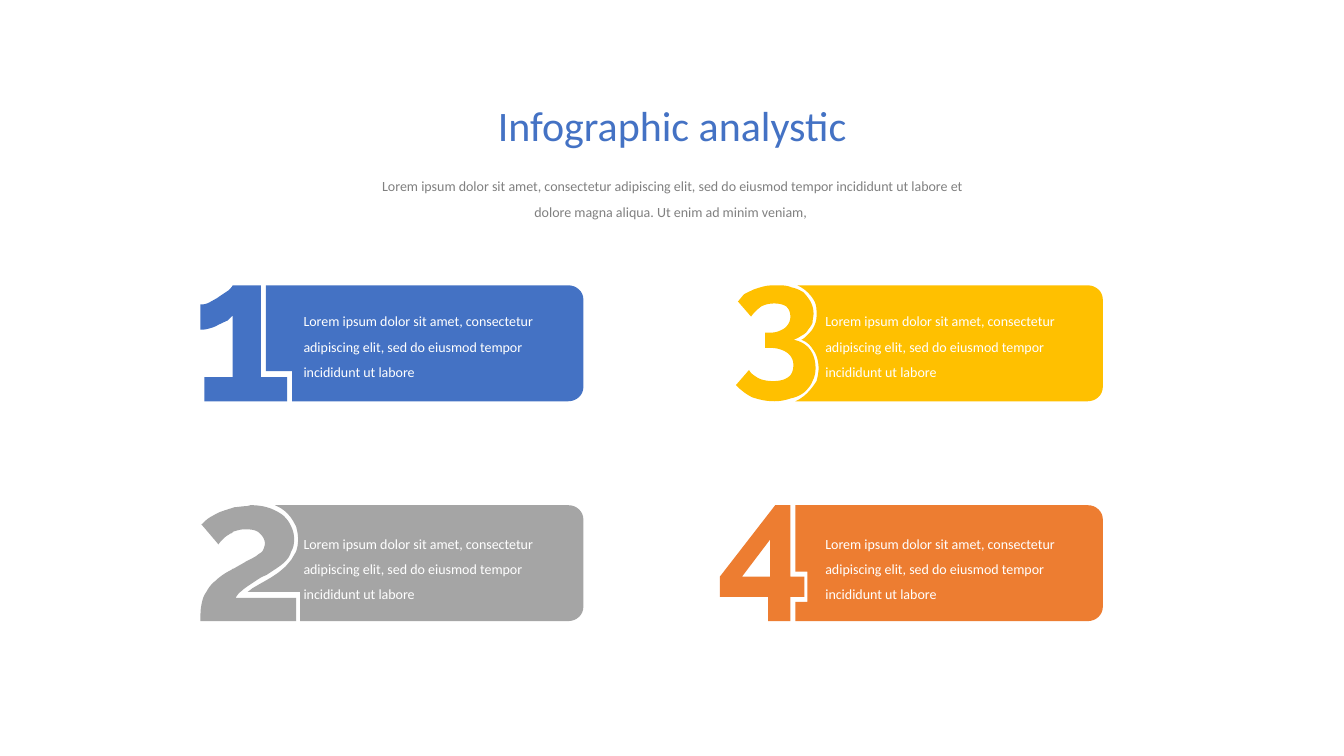
from dataclasses import dataclass

from pptx import Presentation
from pptx.dml.color import RGBColor
from pptx.enum.text import MSO_ANCHOR as Anchor, MSO_AUTO_SIZE as AutoSize, PP_ALIGN as Align
from pptx.util import Cm, Pt


@dataclass(frozen=True)
class Theme:
    font: str = "Calibri"
    blue: str = "4472C4"
    gray: str = "A5A5A5"
    gold: str = "FFC000"
    orange: str = "ED7D31"
    subtitle: str = "808080"
    white: str = "FFFFFF"
    title_size: int = 30
    body_size: int = 10


@dataclass(frozen=True)
class Card:
    column: int
    row: int
    color: str
    digit: list
    notch: list


THEME = Theme()
TITLE = "Infographic analystic"
BODY = ("Lorem ipsum dolor sit amet, consectetur adipiscing elit, "
        "sed do eiusmod tempor incididunt ut labore")
SUBTITLE = f"{BODY} et dolore magna aliqua. Ut enim ad minim veniam, "

CARD_LEFTS = (5.05, 18.14)
CARD_TOPS = (7.19, 12.73)
TEXT_LEFTS = (7.65, 20.8)
TEXT_TOPS = (7.67, 13.28)
CURVE_STEPS = 8

PANEL_END = [
    (365, 0), (373, 0, 380, 6, 380, 14),
    (380, 101), (380, 109, 373, 115, 365, 115),
]

DIGIT_ONE = [[
    (86, 91), (86, 115), (4, 115), (4, 91), (32, 91), (32, 30),
    (31, 31, 29, 33, 27, 35), (24, 36, 21, 38, 18, 39),
    (15, 41, 12, 42, 8, 43), (5, 44, 2, 44, 0, 44), (0, 19),
    (2, 19, 5, 19, 9, 17), (12, 15, 15, 14, 19, 11),
    (22, 9, 25, 7, 28, 5), (30, 3, 32, 1, 32, 0), (60, 0), (60, 91),
]]
NOTCH_ONE = [(91, 115), (91, 85), (65, 85), (65, 0)]

DIGIT_TWO = [[
    (35, 92), (36, 90, 38, 87, 41, 85), (43, 83, 46, 81, 49, 79),
    (52, 77, 55, 75, 58, 73), (61, 71, 64, 70, 66, 69),
    (69, 67, 72, 65, 75, 63), (78, 61, 81, 59, 84, 56),
    (87, 53, 89, 50, 90, 46), (92, 43, 93, 39, 93, 34),
    (93, 29, 92, 25, 90, 21), (88, 16, 85, 13, 82, 10),
    (78, 7, 74, 5, 69, 3), (63, 1, 57, 0, 50, 0),
    (49, 0, 47, 1, 45, 1), (41, 1, 37, 2, 34, 2),
    (28, 4, 24, 5, 19, 7), (15, 9, 11, 11, 8, 13),
    (5, 15, 3, 18, 1, 19), (18, 39), (19, 37, 21, 35, 23, 33),
    (25, 31, 27, 30, 30, 28), (31, 28, 32, 27, 33, 26),
    (34, 26, 36, 25, 37, 25), (40, 24, 42, 24, 46, 24),
    (52, 24, 56, 25, 59, 28), (62, 31, 64, 34, 64, 38),
    (64, 40, 63, 43, 62, 45), (61, 47, 58, 48, 56, 50),
    (53, 52, 49, 54, 45, 56), (42, 58, 38, 60, 33, 63),
    (32, 63, 32, 63, 31, 64), (25, 67, 19, 71, 15, 75),
    (11, 78, 8, 82, 6, 86), (3, 90, 2, 94, 1, 99),
    (0, 104, 0, 110, 0, 115), (95, 115), (95, 92),
]]
NOTCH_TWO = [
    (99, 115), (99, 86), (47, 86), (58, 76, 84, 70, 95, 46),
    (96, 43, 97, 39, 97, 34), (97, 29, 96, 25, 95, 21),
    (93, 18, 89, 6, 74, 0),
]

DIGIT_THREE = [[
    (73, 54), (79, 55, 85, 58, 89, 63), (93, 68, 95, 75, 95, 82),
    (95, 87, 94, 91, 92, 95), (90, 100, 87, 103, 84, 106),
    (80, 109, 76, 111, 71, 112), (65, 114, 60, 115, 54, 115),
    (45, 115, 38, 113, 32, 111), (26, 108, 21, 104, 16, 99), (29, 84),
    (31, 88, 35, 90, 38, 92), (42, 94, 47, 95, 53, 95),
    (59, 95, 64, 94, 68, 91), (71, 89, 73, 85, 73, 79),
    (73, 74, 71, 70, 67, 67), (63, 64, 57, 62, 49, 62),
    (45, 62), (45, 47), (50, 47), (56, 47, 61, 45, 65, 42),
    (68, 39, 70, 36, 70, 31), (70, 27, 69, 24, 66, 21),
    (63, 19, 59, 18, 54, 18), (49, 18, 45, 19, 41, 21),
    (37, 24, 34, 27, 31, 31), (18, 16), (20, 14, 22, 11, 24, 9),
    (27, 7, 30, 6, 34, 4), (37, 3, 40, 2, 44, 1),
    (48, 0, 52, 0, 57, 0), (62, 0, 67, 0, 71, 2),
    (76, 3, 80, 5, 83, 7), (86, 10, 88, 13, 90, 16),
    (92, 20, 93, 24, 93, 28), (93, 31, 92, 34, 92, 37),
    (91, 40, 89, 42, 87, 45), (86, 47, 83, 49, 81, 50),
    (78, 52, 76, 53, 73, 54),
]]
NOTCH_THREE = [
    (75, 115), (87, 110, 94, 98, 96, 95), (97, 91, 98, 87, 98, 82),
    (98, 75, 96, 68, 92, 63), (89, 58, 84, 55, 81, 54),
    (84, 53, 89, 47, 91, 45), (93, 42, 94, 40, 95, 37),
    (96, 34, 96, 31, 96, 28), (96, 24, 96, 20, 94, 16),
    (93, 14, 88, 5, 77, 0),
]

DIGIT_FOUR = [
    [(48, 115), (48, 91), (0, 91), (0, 71), (55, 0), (70, 0),
     (70, 71), (84, 71), (84, 91), (70, 91), (70, 115)],
    [(22, 71), (50, 71), (50, 34)],
]
NOTCH_FOUR = [(75, 115), (75, 96), (87, 96), (87, 66), (75, 66), (75, 0)]

CARDS = (
    Card(0, 0, THEME.blue, DIGIT_ONE, NOTCH_ONE),
    Card(0, 1, THEME.gray, DIGIT_TWO, NOTCH_TWO),
    Card(1, 0, THEME.gold, DIGIT_THREE, NOTCH_THREE),
    Card(1, 1, THEME.orange, DIGIT_FOUR, NOTCH_FOUR),
)


def flatten(outline):
    points = [outline[0]]
    for segment in outline[1:]:
        if len(segment) == 2:
            points.append(segment)
            continue
        controls = (points[-1], segment[:2], segment[2:4], segment[4:])
        for step in range(1, CURVE_STEPS + 1):
            t = step / CURVE_STEPS
            weights = ((1 - t) ** 3, 3 * t * (1 - t) ** 2, 3 * t ** 2 * (1 - t), t ** 3)
            points.append(tuple(
                sum(weight * control[axis] for weight, control in zip(weights, controls))
                for axis in (0, 1)))
    return points


def add_outline(slide, contours, left, top, color):
    builder = None
    for contour in contours:
        points = [(Cm(left + 2.54 * x / 100), Cm(top + 2.54 * y / 100))
                  for x, y in flatten(contour)]
        if builder is None:
            builder = slide.shapes.build_freeform(*points[0])
        else:
            builder.move_to(*points[0])
        builder.add_line_segments(points[1:], close=True)
    shape = builder.convert_to_shape()
    shape.shadow.inherit = False
    shape.fill.solid()
    shape.fill.fore_color.rgb = RGBColor.from_string(color)
    shape.line.fill.background()


def write_text(shape, text, *, box, size, color, align=Align.LEFT, spacing=1.0, wrap=True):
    shape.left, shape.top, shape.width, shape.height = (Cm(value) for value in box)
    frame = shape.text_frame
    frame.margin_left = frame.margin_right = frame.margin_top = frame.margin_bottom = 0
    frame.auto_size = AutoSize.SHAPE_TO_FIT_TEXT
    frame.word_wrap = wrap
    frame.vertical_anchor = Anchor.TOP
    paragraph = frame.paragraphs[0]
    paragraph.alignment = align
    paragraph.line_spacing = spacing
    paragraph.space_before = Pt(0)
    run = paragraph.add_run()
    run.text = text
    run.font.name = THEME.font
    run.font.size = Pt(size)
    run.font.color.rgb = RGBColor.from_string(color)


def add_text(slide, text, **style):
    write_text(slide.shapes.add_textbox(0, 0, 0, 0), text,
               size=THEME.body_size, spacing=1.5, **style)


def add_card(slide, card):
    left, top = CARD_LEFTS[card.column], CARD_TOPS[card.row]
    add_outline(slide, [PANEL_END + card.notch], left, top, card.color)
    add_outline(slide, card.digit, left, top, card.color)
    add_text(slide, BODY, color=THEME.white,
             box=(TEXT_LEFTS[card.column], TEXT_TOPS[card.row], 6.65, 1.85))


def main():
    presentation = Presentation()
    presentation.slide_width, presentation.slide_height = Cm(33.87), Cm(19.05)
    slide = presentation.slides.add_slide(presentation.slide_layouts[5])
    write_text(slide.shapes.title, TITLE, box=(11.35, 2.51, 11.18, 1.27),
               size=THEME.title_size, color=THEME.blue, align=Align.CENTER, wrap=False)
    add_text(slide, SUBTITLE, box=(9.32, 4.27, 15.24, 1.19),
             color=THEME.subtitle, align=Align.CENTER)
    for card in CARDS:
        add_card(slide, card)
    presentation.save("out.pptx")


if __name__ == "__main__":
    main()
